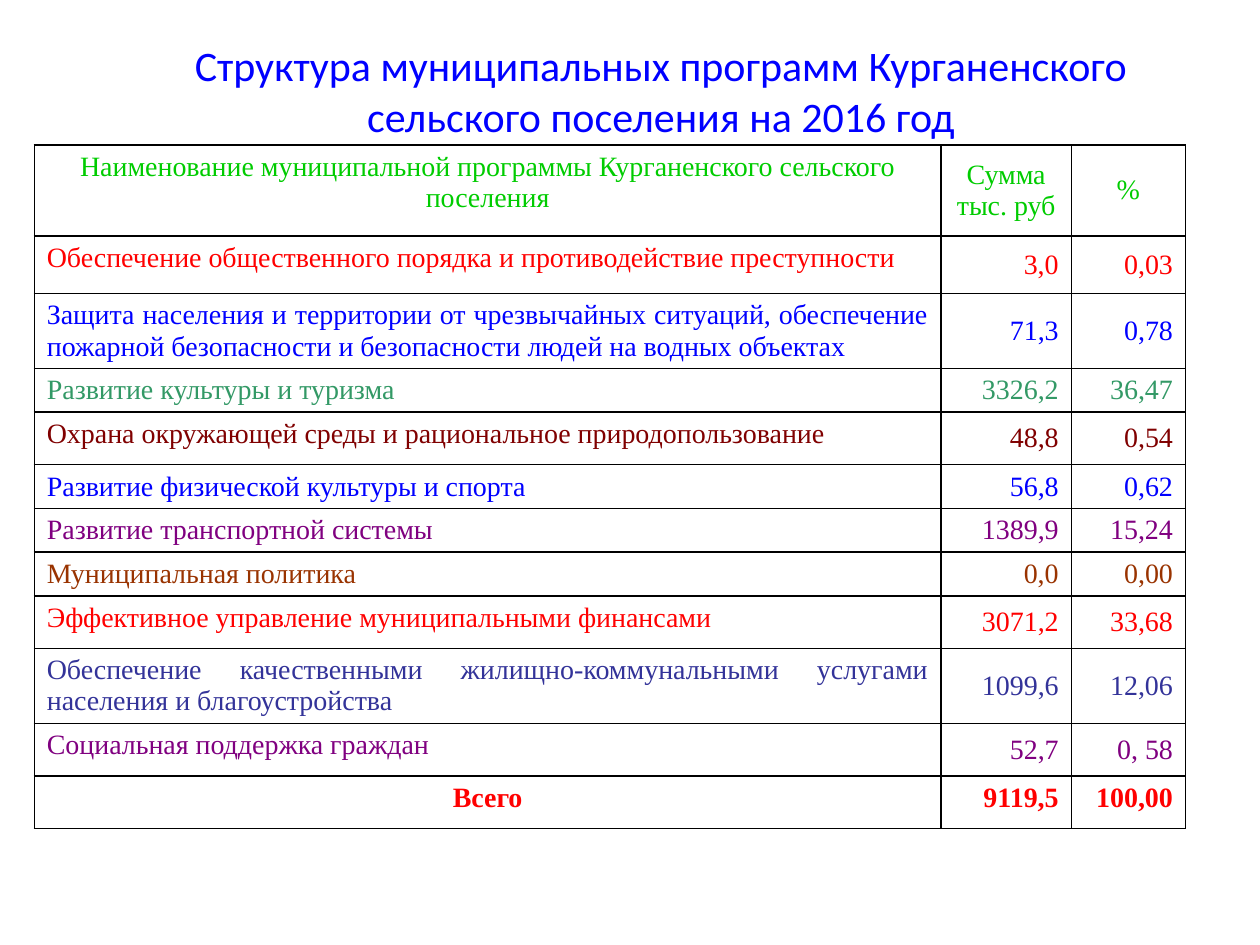
from lxml.etree import SubElement
from pptx import Presentation
from pptx.dml.color import RGBColor as Rgb
from pptx.enum.text import MSO_ANCHOR as Anchor, MSO_AUTO_SIZE as Fit, PP_ALIGN as Align
from pptx.oxml.ns import qn
from pptx.util import Pt

BLACK = Rgb(0, 0, 0)
BLUE = Rgb(0, 0, 255)
LIME = Rgb(0, 204, 0)
RED = Rgb(255, 0, 0)
GREEN = Rgb(51, 153, 102)
MAROON = Rgb(128, 0, 0)
PURPLE = Rgb(128, 0, 128)
BROWN = Rgb(153, 51, 0)
INDIGO = Rgb(51, 51, 153)

TITLE = "Структура муниципальных программ Курганенского сельского поселения на 2016 год"
HEAD = ("Наименование муниципальной программы Курганенского сельского поселения",
        "Сумма тыс. руб", "%")
ROWS = [
    (33, RED, "Обеспечение общественного порядка и противодействие преступности", "3,0", "0,03"),
    (39.6, BLUE, "Защита населения и территории от чрезвычайных ситуаций, обеспечение "
     "пожарной безопасности и безопасности людей на водных объектах", "71,3", "0,78"),
    (22.4, GREEN, "Развитие культуры и туризма", "3326,2", "36,47"),
    (30, MAROON, "Охрана окружающей среды и рациональное природопользование", "48,8", "0,54"),
    (14.4, BLUE, "Развитие физической культуры и спорта", "56,8", "0,62"),
    (17.3, PURPLE, "Развитие транспортной системы", "1389,9", "15,24"),
    (23, BROWN, "Муниципальная политика", "0,0", "0,00"),
    (30, RED, "Эффективное управление муниципальными финансами", "3071,2", "33,68"),
    (41.8, INDIGO, "Обеспечение качественными жилищно-коммунальными услугами населения "
     "и благоустройства", "1099,6", "12,06"),
    (30, PURPLE, "Социальная поддержка граждан", "52,7", "0, 58"),
]
TOTAL = ("Всего", "9119,5", "100,00")


class Deck:
    """Holds the style and the current slide."""

    def __init__(self):
        self.prs = Presentation()
        self.prs.slide_width, self.prs.slide_height = Pt(720), Pt(540)
        self.slide = self.prs.slides.add_slide(self.prs.slide_layouts[5])

    def style(self, para, text, face, size, color, align, bold=False):
        para.text, para.alignment = text, align
        font = para.font
        font.name, font.size, font.bold = face, Pt(size), bold
        font.color.rgb = color

    def title(self, text, left, top, width, height):
        box = self.slide.shapes.title
        box.left, box.top, box.width, box.height = map(Pt, (left, top, width, height))
        frame = box.text_frame
        frame.auto_size, frame.vertical_anchor = Fit.NONE, Anchor.MIDDLE
        self.style(frame.paragraphs[0], text, "Calibri", 24, BLUE, Align.CENTER)

    def table(self, left, top, widths, heights):
        shape = self.slide.shapes.add_table(
            len(heights), len(widths), Pt(left), Pt(top), Pt(sum(widths)), Pt(sum(heights)))
        grid = shape.table
        grid.first_row = grid.horz_banding = False
        for col, width in zip(grid.columns, widths):
            col.width = Pt(width)
        for row, height in zip(grid.rows, heights):
            row.height = Pt(height)
        return grid

    def border(self, cell):
        props = cell._tc.get_or_add_tcPr()
        for side in ("a:lnL", "a:lnR", "a:lnT", "a:lnB"):
            line = SubElement(props, qn(side), w=str(Pt(1)))
            SubElement(SubElement(line, qn("a:solidFill")), qn("a:srgbClr"), val=str(BLACK))

    def row(self, cells, texts, color, aligns, anchor=Anchor.MIDDLE, bold=False):
        anchors = (Anchor.TOP, anchor, anchor)
        for cell, text, align, place in zip(cells, texts, aligns, anchors):
            self.border(cell)
            cell.fill.background()
            cell.vertical_anchor = place
            self.style(cell.text_frame.paragraphs[0], text, "Times New Roman", 16,
                       color, align, bold)

    def save(self):
        self.prs.save("out.pptx")


def main():
    deck = Deck()
    deck.title(TITLE, 72, 20.2, 611.3, 62.6)
    heights = [52, *(row[0] for row in ROWS), 30]
    grid = deck.table(19.6, 82.8, (518.2, 74.4, 65.3), heights)
    first, *body, last = (row.cells for row in grid.rows)
    deck.row(first, HEAD, LIME, [Align.CENTER] * 3)
    for cells, (_, color, *texts) in zip(body, ROWS):
        deck.row(cells, texts, color, (Align.JUSTIFY, Align.RIGHT, Align.RIGHT))
    deck.row(last, TOTAL, RED, (Align.CENTER, Align.RIGHT, Align.RIGHT), Anchor.TOP, True)
    deck.save()


if __name__ == "__main__":
    main()
